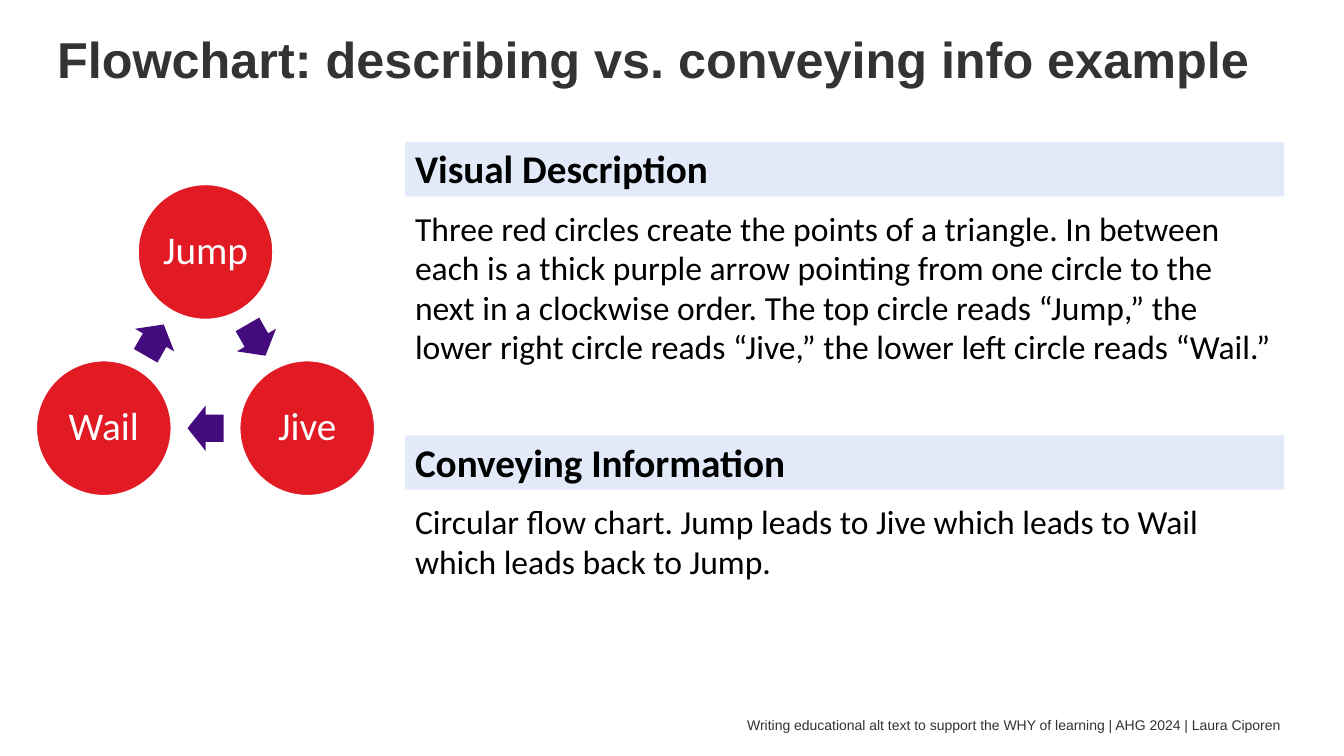
from math import cos, radians, sin

from lxml.etree import SubElement
from pptx import Presentation
from pptx.dml.color import RGBColor
from pptx.enum.shapes import MSO_SHAPE as Shape
from pptx.enum.text import MSO_ANCHOR as Anchor, PP_ALIGN as Align
from pptx.oxml.ns import qn
from pptx.util import Cm, Pt

COLORS = {
    "ink": "333333",
    "black": "000000",
    "white": "FFFFFF",
    "red": "E21A23",
    "purple": "440B7F",
    "blue": "1156D9",
}


def write(box, text, size, font, color, bold=False, align=Align.LEFT,
          anchor=Anchor.TOP, spacing=0.98, inset=None):
    frame = box.text_frame
    frame.word_wrap = True
    frame.vertical_anchor = anchor
    if inset is not None:
        frame.margin_left = frame.margin_right = Cm(inset)
        frame.margin_top = frame.margin_bottom = Cm(inset)
    paragraph = frame.paragraphs[0]
    paragraph.alignment = align
    paragraph.line_spacing = spacing
    run = paragraph.add_run()
    run.text = text
    run.font.size = Pt(size)
    run.font.name = font
    run.font.bold = bold
    run.font.color.rgb = RGBColor.from_string(COLORS[color])


def add_filled(kind, left, top, width, height, color):
    shape = slide.shapes.add_shape(kind, Cm(left), Cm(top), Cm(width), Cm(height))
    shape.shadow.inherit = False
    shape.fill.solid()
    shape.fill.fore_color.rgb = RGBColor.from_string(COLORS[color])
    shape.line.fill.background()
    return shape


deck = Presentation()
deck.slide_width, deck.slide_height = Cm(33.87), Cm(19.05)
slide = deck.slides.add_slide(deck.slide_layouts[6])

title = slide.shapes.add_textbox(Cm(1.19), Cm(0.64), Cm(31.19), Cm(1.8))
write(title, "Flowchart: describing vs. conveying info example", 36, "Arial", "ink",
      bold=True, anchor=Anchor.MIDDLE)

cycle_x, cycle_y, cycle_radius = 5.18, 9.31, 2.96
diameter = 3.4
arrow_length, arrow_width = 0.91, 1.14
arrow_radius = cycle_radius / 2

for step, word in enumerate(["Jump", "Jive", "Wail"]):
    angle = 120 * step - 90
    x = cycle_x + cycle_radius * cos(radians(angle))
    y = cycle_y + cycle_radius * sin(radians(angle))
    circle = add_filled(Shape.OVAL, x - diameter / 2, y - diameter / 2,
                        diameter, diameter, "red")
    circle.line.color.rgb = RGBColor.from_string(COLORS["white"])
    circle.line.width = Pt(1)
    write(circle, word, 28, "Calibri", "white", align=Align.CENTER,
          anchor=Anchor.MIDDLE, spacing=0.9, inset=0.1)

    x = cycle_x + arrow_radius * cos(radians(angle + 60))
    y = cycle_y + arrow_radius * sin(radians(angle + 60))
    arrow = add_filled(Shape.RIGHT_ARROW, x - arrow_length / 2, y - arrow_width / 2,
                       arrow_length, arrow_width, "purple")
    arrow.adjustments[0], arrow.adjustments[1] = 0.6, 0.5
    arrow.rotation = angle + 150

sections = [
    ("Visual Description",
     "Three red circles create the points of a triangle. In between each is a thick "
     "purple arrow pointing from one circle to the next in a clockwise order. The top "
     "circle reads “Jump,” the lower right circle reads “Jive,” the lower left circle "
     "reads “Wail.”"),
    ("Conveying Information",
     "Circular flow chart. Jump leads to Jive which leads to Wail which leads back to "
     "Jump."),
]
section_left, section_width = 10.21, 22.15
for row, (heading, body) in enumerate(sections):
    top = 3.58 + 7.39 * row
    band = add_filled(Shape.RECTANGLE, section_left, top, section_width, 1.37, "blue")
    tint = band.fill._xPr.find(qn("a:solidFill"))[0]
    SubElement(tint, qn("a:alpha"), val="12000")
    write(band, heading, 28, "Calibri", "black", bold=True)

    description = slide.shapes.add_textbox(Cm(section_left), Cm(top + 1.58),
                                           Cm(section_width), Cm(5.03))
    write(description, body, 24, "Calibri", "black")

footer = slide.shapes.add_textbox(Cm(1.17), Cm(17.93), Cm(31.22), Cm(0.69))
write(footer, "Writing educational alt text to support the WHY of learning | AHG 2024 | "
      "Laura Ciporen", 10, "Arial", "ink", align=Align.RIGHT, anchor=Anchor.MIDDLE,
      inset=0.13)

deck.save("out.pptx")
